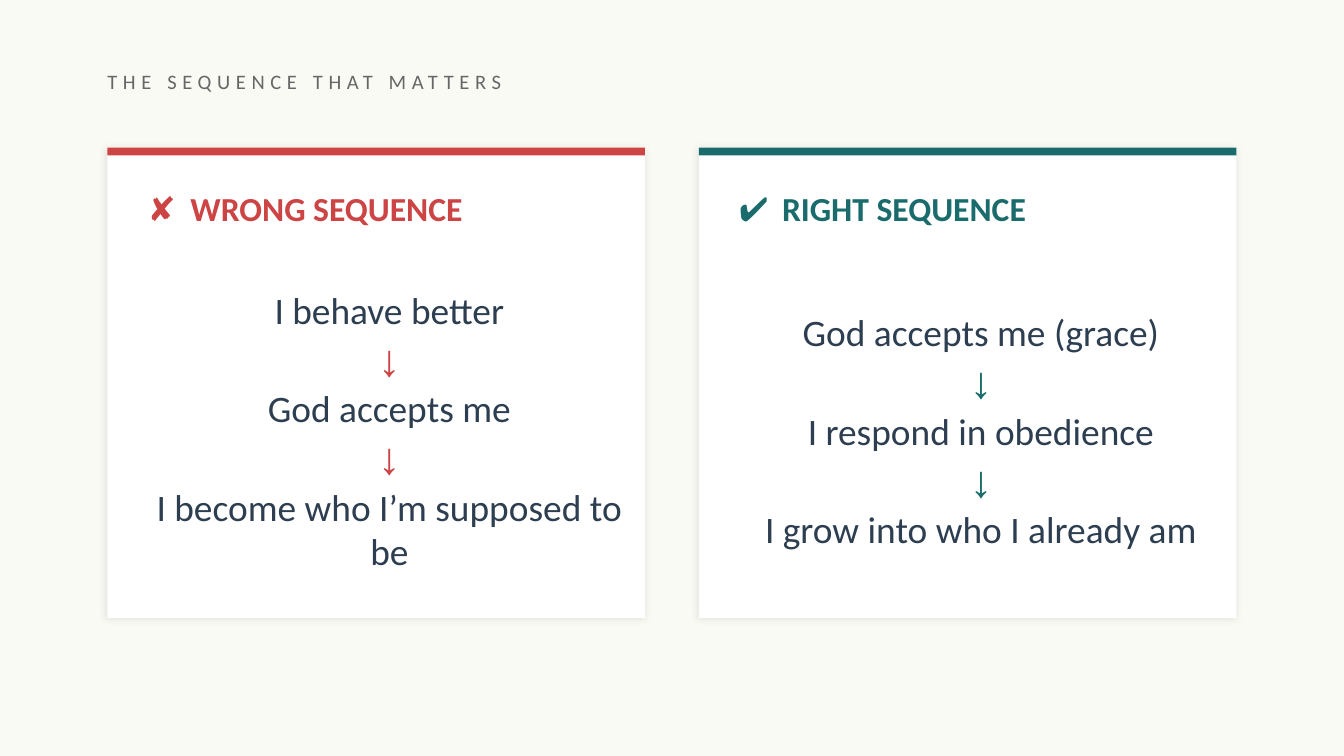
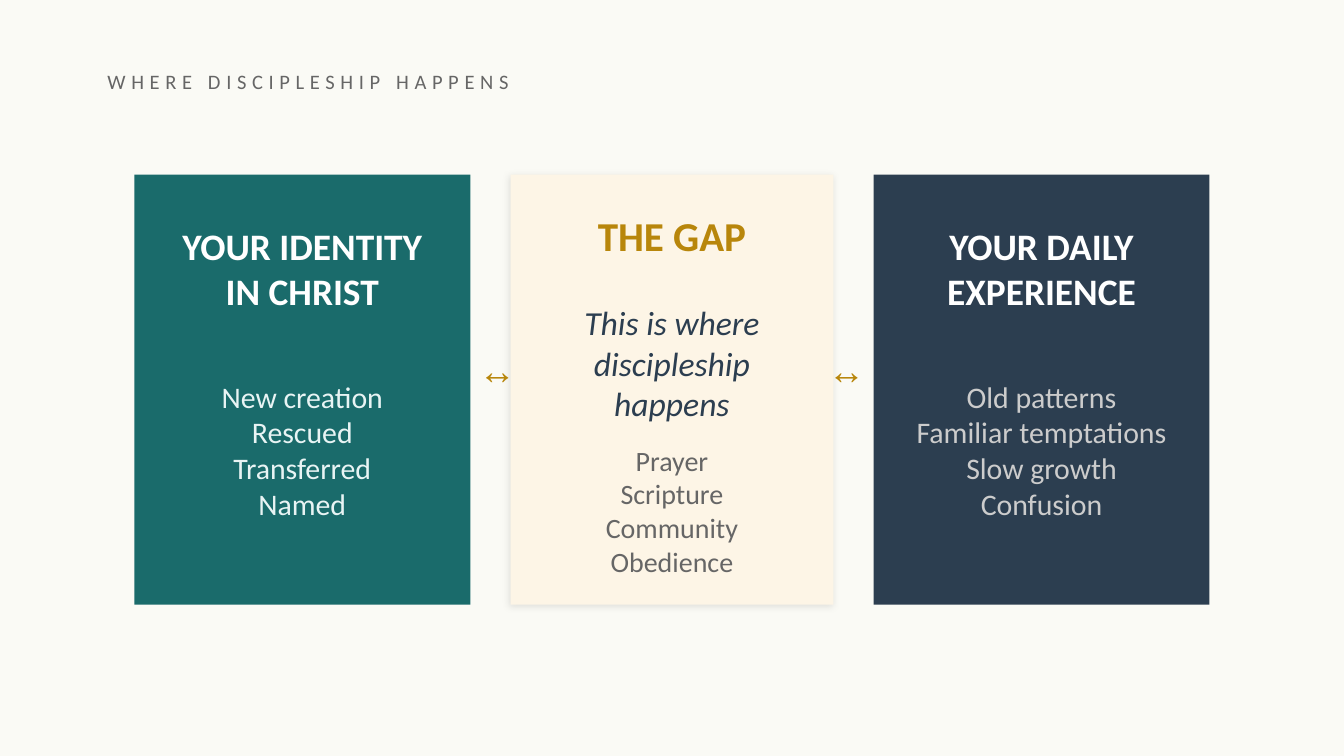
from lxml.etree import SubElement
from pptx import Presentation
from pptx.dml.color import RGBColor
from pptx.enum.shapes import MSO_SHAPE
from pptx.enum.text import MSO_ANCHOR, PP_ALIGN
from pptx.oxml import parse_xml
from pptx.oxml.ns import nsdecls, qn
from pptx.util import Cm, Pt

CREAM = RGBColor(0xFA, 0xFA, 0xF5)
WHITE = RGBColor(0xFF, 0xFF, 0xFF)
GREY = RGBColor(0x66, 0x66, 0x66)
SILVER = RGBColor(0xCC, 0xCC, 0xCC)
RED = RGBColor(0xCC, 0x44, 0x44)
TEAL = RGBColor(0x1A, 0x6B, 0x6B)
MIST = RGBColor(0xE8, 0xF4, 0xF4)
NAVY = RGBColor(0x2C, 0x3E, 0x50)
GOLD = RGBColor(0xB8, 0x86, 0x0B)
SAND = RGBColor(0xFD, 0xF5, 0xE6)

# Slide 1: mark, heading, colour, steps
SEQUENCES = [
    ("✘", "WRONG SEQUENCE", RED,
     ["I behave better", "God accepts me", "I become who I’m supposed to be"]),
    ("✔", "RIGHT SEQUENCE", TEAL,
     ["God accepts me (grace)", "I respond in obedience", "I grow into who I already am"]),
]

# Slide 2: each text block is (lines, top, height, format)
HEADING = dict(size=20, color=WHITE, bold=True)
PANELS = [
    dict(width=6.35, fill=TEAL, shadow=False, blocks=[
        (["YOUR IDENTITY", "IN CHRIST"], 4.06, 2.03, HEADING),
        (["New creation", "Rescued", "Transferred", "Named"], 6.6, 3.81,
         dict(size=16, color=MIST)),
    ]),
    dict(width=6.1, fill=SAND, shadow=True, blocks=[
        (["THE GAP"], 3.81, 1.27, dict(size=22, color=GOLD, bold=True)),
        (["This is where", "discipleship", "happens"], 5.59, 2.54,
         dict(size=18, color=NAVY, italic=True)),
        (["Prayer", "Scripture", "Community", "Obedience"], 8.38, 2.54,
         dict(size=15, color=GREY)),
    ]),
    dict(width=6.35, fill=NAVY, shadow=False, blocks=[
        (["YOUR DAILY", "EXPERIENCE"], 4.06, 2.03, HEADING),
        (["Old patterns", "Familiar temptations", "Slow growth", "Confusion"], 6.6, 3.81,
         dict(size=16, color=SILVER)),
    ]),
]

SHADOW = (
    f'<a:effectLst {nsdecls("a")}>'
    '<a:outerShdw blurRad="50800" dist="12700" dir="8100000" algn="bl" rotWithShape="0">'
    '<a:srgbClr val="000000"><a:alpha val="10000"/></a:srgbClr>'
    '</a:outerShdw></a:effectLst>'
)


def add_text(slide, lines, left, top, width, height, align=PP_ALIGN.CENTER, tab=None, **text_format):
    """Add a text box; a line is a string or a (string, format changes) pair."""
    box = slide.shapes.add_textbox(Cm(left), Cm(top), Cm(width), Cm(height))
    frame = box.text_frame
    frame.word_wrap = True
    frame.vertical_anchor = MSO_ANCHOR.MIDDLE
    frame.margin_left = frame.margin_right = frame.margin_top = frame.margin_bottom = 0
    for index, line in enumerate(lines):
        text, changes = (line, {}) if isinstance(line, str) else line
        style = {**text_format, **changes}
        paragraph = frame.paragraphs[0] if index == 0 else frame.add_paragraph()
        paragraph.alignment = align
        if tab:
            tabs = SubElement(paragraph._p.get_or_add_pPr(), qn("a:tabLst"))
            SubElement(tabs, qn("a:tab"), pos=str(Cm(tab)), algn="l")
        run = paragraph.add_run()
        run.text = text
        font = run.font
        font.name = style.get("font", "Calibri")
        font.size = Pt(style["size"])
        font.color.rgb = style["color"]
        font.bold = style.get("bold")
        font.italic = style.get("italic")
        if "spacing" in style:
            run._r.get_or_add_rPr().set("spc", str(style["spacing"] * 100))


def add_block(slide, left, top, width, height, fill, shadow=False):
    shape = slide.shapes.add_shape(
        MSO_SHAPE.RECTANGLE, Cm(left), Cm(top), Cm(width), Cm(height))
    shape.fill.solid()
    shape.fill.fore_color.rgb = fill
    shape.line.fill.background()
    if shadow:
        shape._element.spPr.append(parse_xml(SHADOW))
    else:
        shape.shadow.inherit = False


def add_titled_slide(presentation, title):
    slide = presentation.slides.add_slide(presentation.slide_layouts[6])
    slide.background.fill.solid()
    slide.background.fill.fore_color.rgb = CREAM
    add_text(slide, [title], 2.03, 1.02, 21.34, 1.02, align=PP_ALIGN.LEFT,
             size=11, color=GREY, spacing=3)
    return slide


def build_sequences(presentation):
    slide = add_titled_slide(presentation, "THE SEQUENCE THAT MATTERS")
    top, width, gap, inset = 2.79, 10.16, 1.02, 0.76
    for index, (mark, heading, color, steps) in enumerate(SEQUENCES):
        left = 2.03 + index * (width + gap)
        add_block(slide, left, top, width, 8.89, WHITE, shadow=True)
        add_block(slide, left, top, width, 0.15, color)
        add_text(slide, [f"{mark}\t{heading}"], left + inset, 3.3, 9.14, 1.27,
                 align=PP_ALIGN.LEFT, tab=0.81, size=18, color=color, bold=True)
        arrow = ("↓", dict(font="Arial", size=24, color=color))
        lines = [steps[0]]
        for step in steps[1:]:
            lines += [arrow, step]
        add_text(slide, lines, left + inset, 5.08, 9.14, 6.1, size=20, color=NAVY)


def build_gap(presentation):
    slide = add_titled_slide(presentation, "WHERE DISCIPLESHIP HAPPENS")
    left, gap, arrow_width = 2.54, 0.76, 1.02
    edges = []
    for panel in PANELS:
        width = panel["width"]
        add_block(slide, left, 3.3, width, 8.13, panel["fill"], panel["shadow"])
        for lines, top, height, text_format in panel["blocks"]:
            add_text(slide, lines, left, top, width, height, **text_format)
        edges.append((left, left + width))
        left += width + gap
    # Each arrow touches the outer panel on its side
    for arrow_left in (edges[0][1], edges[2][0] - arrow_width):
        add_text(slide, ["↔"], arrow_left, 6.35, arrow_width, 1.27,
                 font="Arial", size=20, color=GOLD)


def main():
    presentation = Presentation()
    presentation.slide_width = Cm(25.4)
    presentation.slide_height = Cm(14.29)
    build_sequences(presentation)
    build_gap(presentation)
    presentation.save("out.pptx")


if __name__ == "__main__":
    main()
